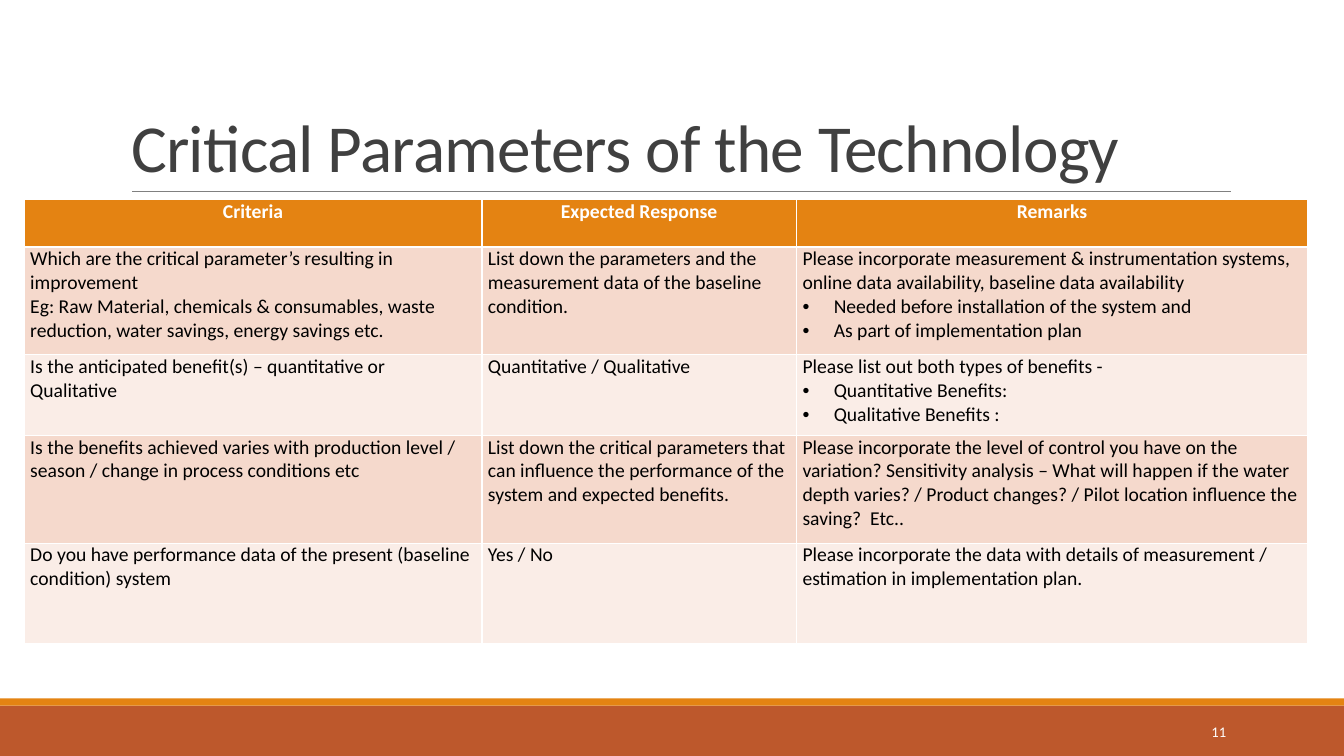
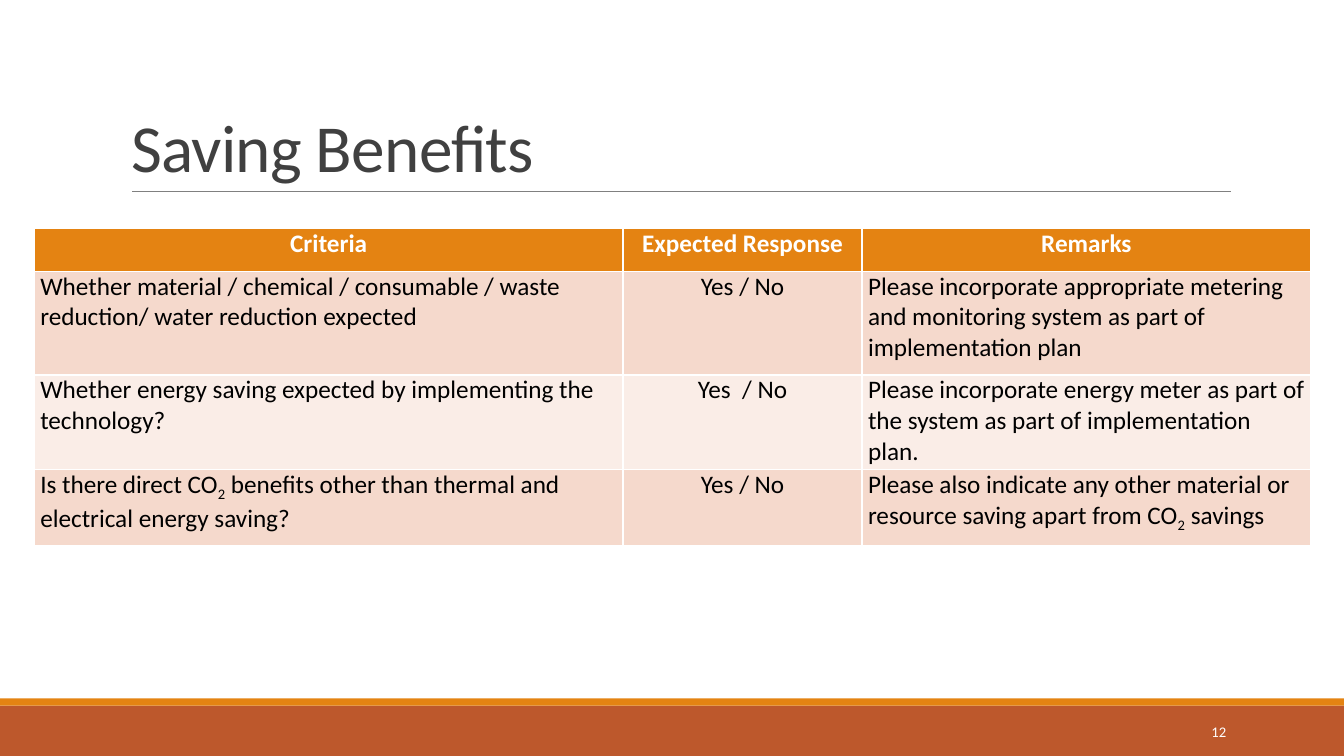
from lxml.etree import SubElement
from pptx import Presentation
from pptx.dml.color import RGBColor
from pptx.enum.shapes import MSO_CONNECTOR, MSO_SHAPE
from pptx.enum.text import MSO_ANCHOR, MSO_AUTO_SIZE, PP_ALIGN
from pptx.oxml.ns import qn
from pptx.util import Inches, Pt

# Shared look
ORANGE, RUST, WHITE, BLACK = "E48312", "BD582C", "FFFFFF", "000000"
TITLE_GREY, RULE_GREY = "404040", "808080"
ROW_TINTS = ["F5D9CC", "FAEDE7"]
BANDS = [(7, 0.5, RUST), (6.93, 0.07, ORANGE)]
FIRST_NUMBER = 11
HEADINGS = ["Criteria", "Expected Response", "Remarks"]
CELL_FORMAT = {
    "margin_left": Inches(0.06), "margin_right": Inches(0.06),
    "margin_top": 0, "margin_bottom": 0, "vertical_anchor": MSO_ANCHOR.TOP,
}


def rgb(value):
    return RGBColor.from_string(value)


def style_font(font, size, color, bold=False):
    for key, value in {"name": "Calibri", "size": Pt(size), "bold": bold}.items():
        setattr(font, key, value)
    font.color.rgb = rgb(color)


# Content: a line starting with "• " is a bullet
pages = [
    {
        "title": "Critical Parameters of the Technology",
        "corner": (0.24, 1.98), "size": 14, "response_align": PP_ALIGN.LEFT,
        "columns": [4.54, 3.12, 5.07], "heights": [0.47, 1.07, 0.8, 1.07, 1],
        "rows": [
            ["Which are the critical parameter’s resulting in improvement\n"
             "Eg: Raw Material, chemicals & consumables, waste reduction, "
             "water savings, energy savings etc.",
             "List down the parameters and the measurement data of the baseline condition.",
             "Please incorporate measurement & instrumentation systems, "
             "online data availability, baseline data availability\n"
             "• Needed before installation of the system and\n"
             "• As part of implementation plan"],
            ["Is the anticipated benefit(s) – quantitative or Qualitative",
             "Quantitative / Qualitative",
             "Please list out both types of benefits -\n"
             "• Quantitative Benefits:\n• Qualitative Benefits :"],
            ["Is the benefits achieved varies with production level / season / "
             "change in process conditions etc",
             "List down the critical parameters that can influence the performance "
             "of the system and expected benefits.",
             "Please incorporate the level of control you have on the variation? "
             "Sensitivity analysis – What will happen if the water depth varies? / "
             "Product changes? / Pilot location influence the saving?  Etc.."],
            ["Do you have performance data of the present (baseline condition) system",
             "Yes / No",
             "Please incorporate the data with details of measurement / "
             "estimation in implementation plan."],
        ],
    },
    {
        "title": "Saving Benefits",
        "corner": (0.34, 2.27), "size": 18, "response_align": PP_ALIGN.CENTER,
        "columns": [5.84, 2.37, 4.45], "heights": [0.42, 1.03, 0.94, 0.75],
        "rows": [
            ["Whether material / chemical / consumable / waste reduction/ "
             "water reduction expected",
             "Yes / No",
             "Please incorporate appropriate metering and monitoring system "
             "as part of implementation plan"],
            ["Whether energy saving expected by implementing the technology?",
             "Yes  / No",
             "Please incorporate energy meter as part of the system "
             "as part of implementation plan."],
            ["Is there direct CO2 benefits other than thermal and electrical energy saving?",
             "Yes / No",
             "Please also indicate any other material or resource saving "
             "apart from CO2 savings"],
        ],
    },
]

prs = Presentation()
prs.slide_width, prs.slide_height = Inches(13.33), Inches(7.5)

for number, page in enumerate(pages, FIRST_NUMBER):
    slide = prs.slides.add_slide(prs.slide_layouts[5])

    # Footer bands
    for top, height, color in BANDS:
        band = slide.shapes.add_shape(MSO_SHAPE.RECTANGLE, 0, Inches(top),
                                      prs.slide_width, Inches(height))
        band.shadow.inherit = False
        band.fill.solid()
        band.fill.fore_color.rgb = rgb(color)
        band.line.fill.background()

    # Rule under the title
    rule = slide.shapes.add_connector(MSO_CONNECTOR.STRAIGHT, Inches(1.31), Inches(1.9),
                                      Inches(12.21), Inches(1.9))
    rule.line.color.rgb = rgb(RULE_GREY)
    rule.line.width = Pt(0.5)
    SubElement(rule.element.spPr, qn("a:effectLst"))

    # Title
    title = slide.shapes.title
    title.left, title.top, title.width, title.height = map(Inches, (1.2, 0.31, 11, 1.59))
    title.text_frame.text = page["title"]
    title.text_frame.auto_size = MSO_AUTO_SIZE.NONE
    title.text_frame.vertical_anchor = MSO_ANCHOR.BOTTOM
    heading = title.text_frame.paragraphs[0]
    heading.alignment = PP_ALIGN.LEFT
    heading.line_spacing = 0.85
    style_font(heading.runs[0].font, 48, TITLE_GREY)
    heading.runs[0].font._element.set("spc", "-50")

    # Page number
    page_number = slide.shapes.add_textbox(*map(Inches, (10.83, 7.06, 1.43, 0.4))).text_frame
    page_number.word_wrap = True
    page_number.vertical_anchor = MSO_ANCHOR.MIDDLE
    page_number.text = str(number)
    page_number.paragraphs[0].alignment = PP_ALIGN.RIGHT
    style_font(page_number.paragraphs[0].runs[0].font, 10.5, WHITE)

    # Criteria table
    rows = [HEADINGS] + page["rows"]
    criteria = slide.shapes.add_table(
        len(rows), len(HEADINGS), *map(Inches, page["corner"]),
        Inches(sum(page["columns"])), Inches(sum(page["heights"]))).table
    for column, width in zip(criteria.columns, page["columns"]):
        column.width = Inches(width)
    for row, height in zip(criteria.rows, page["heights"]):
        row.height = Inches(height)

    for r, texts in enumerate(rows):
        is_header = r == 0
        for c, text in enumerate(texts):
            cell = criteria.cell(r, c)
            for key, value in CELL_FORMAT.items():
                setattr(cell, key, value)
            cell.fill.solid()
            cell.fill.fore_color.rgb = rgb(ORANGE if is_header else ROW_TINTS[(r - 1) % 2])

            for i, line in enumerate(text.split("\n")):
                frame = cell.text_frame
                paragraph = frame.add_paragraph() if i else frame.paragraphs[0]
                paragraph.alignment = (PP_ALIGN.CENTER if is_header else
                                       page["response_align"] if c == 1 else PP_ALIGN.LEFT)
                if line.startswith("• "):
                    props = paragraph._p.get_or_add_pPr()
                    props.set("marL", str(Inches(0.31)))
                    props.set("indent", str(-Inches(0.31)))
                    SubElement(props, qn("a:buFont"), typeface="Arial")
                    SubElement(props, qn("a:buChar"), char="•")
                    line = line[2:]
                # Every second piece is the subscript of CO2
                for k, piece in enumerate(line.replace("CO2", "CO|2|").split("|")):
                    run = paragraph.add_run()
                    run.text = piece
                    style_font(run.font, page["size"], WHITE if is_header else BLACK, is_header)
                    if k % 2:
                        run.font._element.set("baseline", "-25000")

prs.save("out.pptx")
